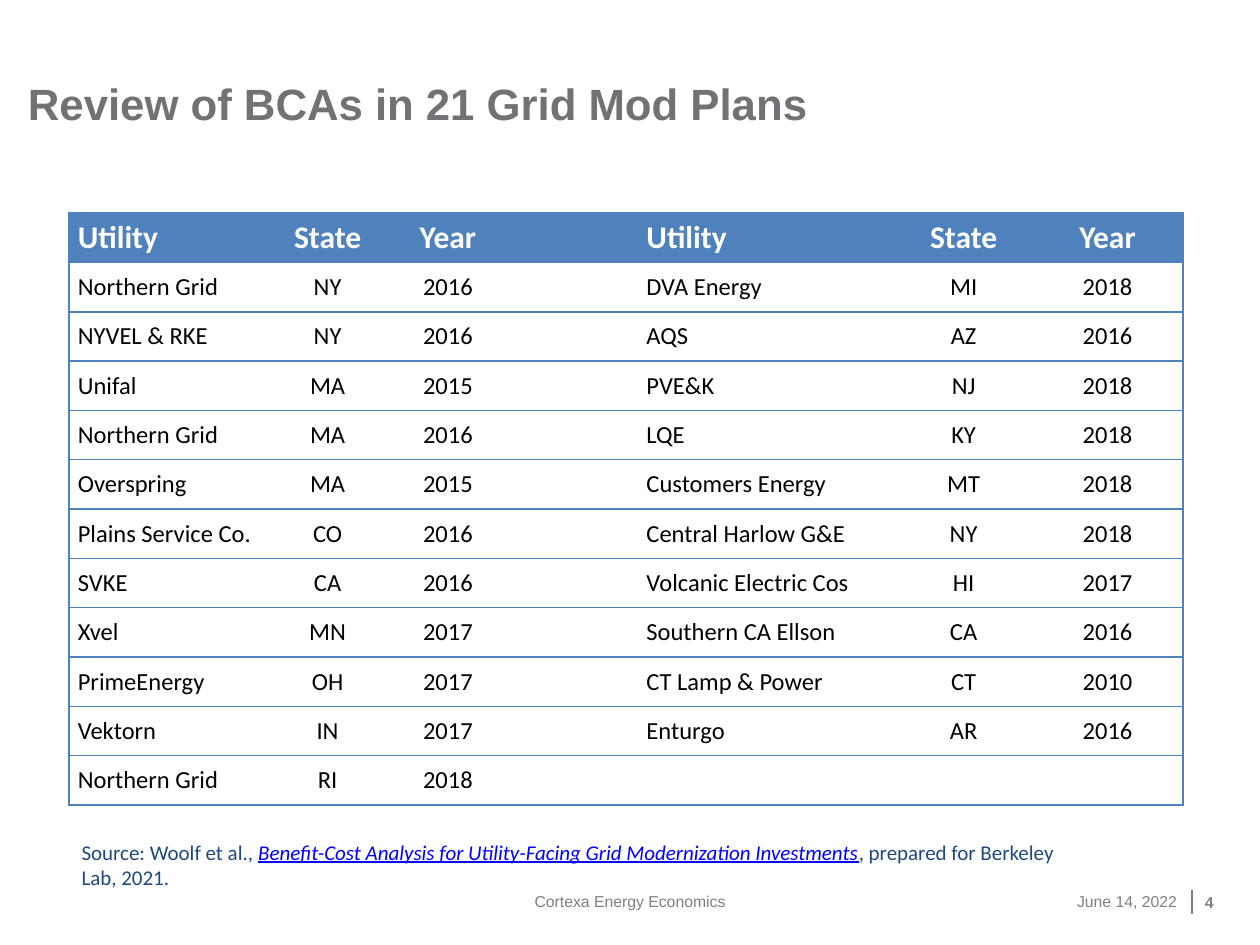
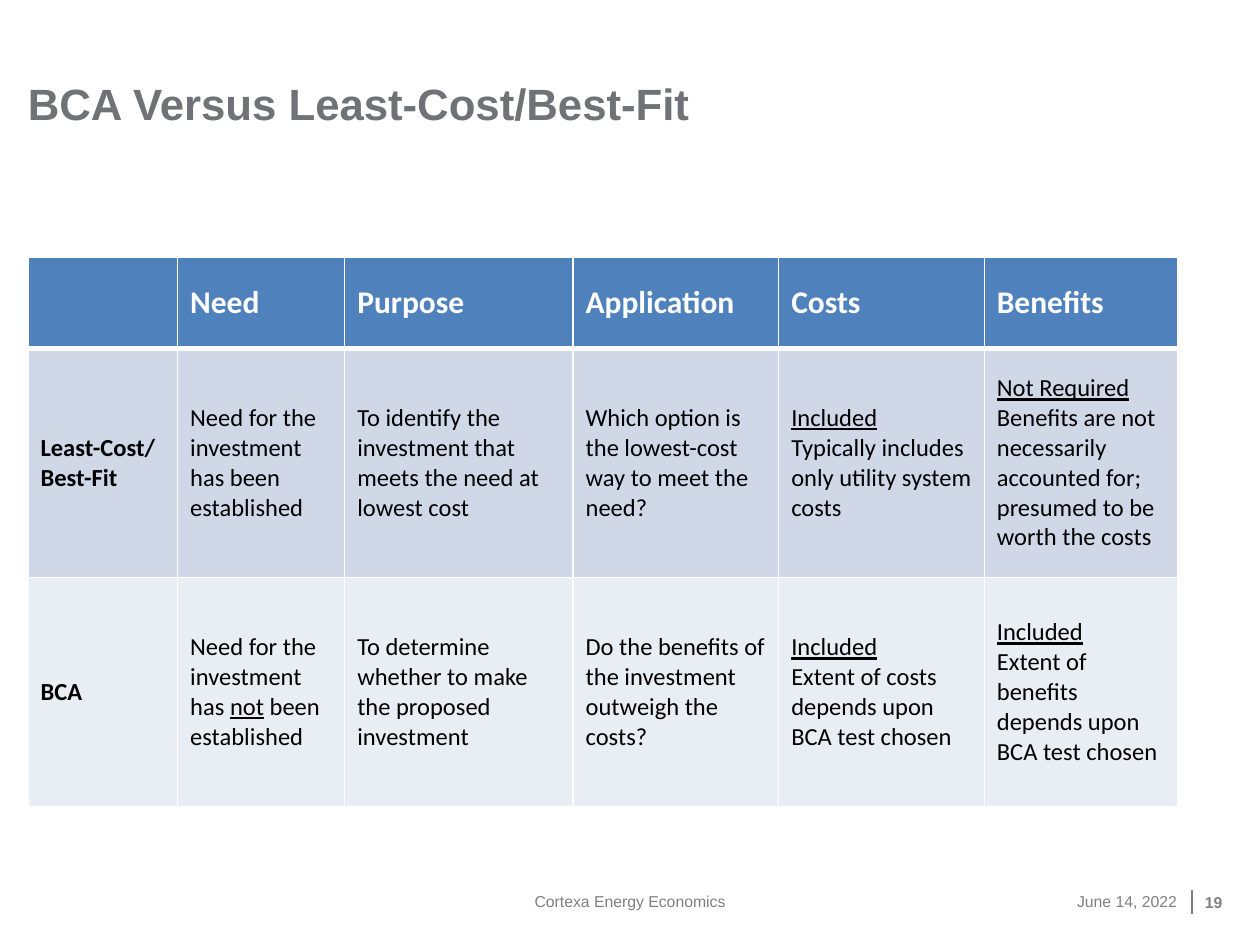
from lxml.etree import SubElement
from pptx import Presentation
from pptx.dml.color import RGBColor
from pptx.enum.shapes import MSO_CONNECTOR
from pptx.enum.text import MSO_ANCHOR, PP_ALIGN
from pptx.oxml.ns import qn
from pptx.util import Pt

BLUE, WHITE, BLACK, GREY = "4F81BD", "FFFFFF", "000000", "808080"
BANDS = ["D0D8E8", "E9EDF4"]
LEFT, MID, RIGHT = PP_ALIGN.LEFT, PP_ALIGN.CENTER, PP_ALIGN.RIGHT

TITLE = {"name": "Arial", "size": Pt(25), "bold": True, "ink": "707276"}
SMALL = {"name": "Arial", "size": Pt(9), "bold": False, "ink": GREY}
HEAD = {"name": "Calibri", "size": Pt(18), "bold": True, "ink": WHITE}
BODY = {"name": "Calibri", "size": Pt(14), "bold": False, "ink": BLACK}
NOTE = {"name": "Calibri", "size": Pt(12), "ink": "1F497D"}
UNDER = {"underline": True}
CITED = {"underline": True, "italic": True, "ink": "0000FF"}

PLANS = [
    "Utility|State|Year||Utility|State|Year",
    "Northern Grid|NY|2016||DVA Energy|MI|2018",
    "NYVEL & RKE|NY|2016||AQS|AZ|2016",
    "Unifal|MA|2015||PVE&K|NJ|2018",
    "Northern Grid|MA|2016||LQE|KY|2018",
    "Overspring|MA|2015||Customers Energy|MT|2018",
    "Plains Service Co.|CO|2016||Central Harlow G&E|NY|2018",
    "SVKE|CA|2016||Volcanic Electric Cos|HI|2017",
    "Xvel|MN|2017||Southern CA Ellson|CA|2016",
    "PrimeEnergy|OH|2017||CT Lamp & Power|CT|2010",
    "Vektorn|IN|2017||Enturgo|AR|2016",
    "Northern Grid|RI|2018||||",
]
TESTS = [
    ["", "Need", "Purpose", "Application", "Costs", "Benefits"],
    ["Least-Cost/\nBest-Fit",
     "Need for the investment has been established",
     "To identify the investment that meets the need at lowest cost",
     "Which option is the lowest-cost way to meet the need?",
     "_Included_\nTypically includes only utility system costs",
     "_Not Required_\nBenefits are not necessarily accounted for; "
     "presumed to be worth the costs"],
    ["BCA",
     "Need for the investment has _not_ been established",
     "To determine whether to make the proposed investment",
     "Do the benefits of the investment outweigh the costs?",
     "_Included_\nExtent of costs depends upon BCA test chosen",
     "_Included_\nExtent of benefits depends upon BCA test chosen"],
]
SOURCE = ("Source: Woolf et al., _Benefit-Cost Analysis for Utility-Facing Grid "
          "Modernization Investments_, prepared for Berkeley Lab, 2021.")


def hue(code):
    """Turn a hex string into a colour."""
    return RGBColor.from_string(code)


def style(font, look):
    """Apply a dict of format values to a font."""
    for key, value in look.items():
        if key == "ink":
            font.color.rgb = hue(value)
        else:
            setattr(font, key, value)


def write(frame, text, look, mark=UNDER, align=LEFT, gap=0):
    """Fill a frame with lines of text; parts between underscores take the mark."""
    for row, line in enumerate(text.split("\n")):
        para = frame.add_paragraph() if row else frame.paragraphs[0]
        para.alignment = align
        if gap:
            para.space_before = para.space_after = Pt(gap)
        for turn, part in enumerate(line.split("_")):
            if part:
                run = para.add_run()
                run.text = part
                style(run.font, {**look, **mark} if turn % 2 else look)


def label(slide, box, text, look, anchor=MSO_ANCHOR.MIDDLE, align=LEFT,
          pads=(0, 0, 0, 0), mark=UNDER):
    """Add a wrapped text box."""
    frame = slide.shapes.add_textbox(*map(Pt, box)).text_frame
    frame.word_wrap = True
    frame.vertical_anchor = anchor
    for side, pad in zip(("left", "top", "right", "bottom"), pads):
        setattr(frame, "margin_" + side, Pt(pad))
    write(frame, text, look, mark, align)


def edge(cell, side, ink, width=1):
    """Draw one cell border, or clear it when there is no ink."""
    props = cell._tc.get_or_add_tcPr()
    line = SubElement(props, qn("a:ln" + side), w=str(Pt(width)))
    if ink:
        fill = SubElement(line, qn("a:solidFill"))
        SubElement(fill, qn("a:srgbClr"), val=ink)
    else:
        SubElement(line, qn("a:noFill"))


def grid(slide, left, top, cols, rows):
    """Add a table with given column widths and row heights."""
    size = map(Pt, (left, top, sum(cols), sum(rows)))
    table = slide.shapes.add_table(len(rows), len(cols), *size).table
    table.horz_banding = False
    for col, width in zip(table.columns, cols):
        col.width = Pt(width)
    for row, height in zip(table.rows, rows):
        row.height = Pt(height)
    return table


def paint(cell, text, look, fill, pads, align=LEFT, gap=0):
    """Fill a cell with colour and text."""
    cell.fill.solid()
    cell.fill.fore_color.rgb = hue(fill)
    cell.vertical_anchor = MSO_ANCHOR.MIDDLE
    cell.margin_left = cell.margin_right = Pt(pads[0])
    cell.margin_top = cell.margin_bottom = Pt(pads[1])
    write(cell.text_frame, text, look, align=align, gap=gap)


def frame_page(deck, title, page, left, width):
    """Add a slide with its title and footer."""
    slide = deck.slides.add_slide(deck.slide_layouts[6])
    label(slide, (578, 500.5, 94.5, 29), "June 14, 2022", SMALL, align=RIGHT)
    rule = slide.shapes.add_connector(
        MSO_CONNECTOR.STRAIGHT, Pt(681), Pt(508.5), Pt(681), Pt(522.5))
    rule.line.color.rgb = hue(GREY)
    rule.line.width = Pt(1)
    SubElement(rule._element.spPr, qn("a:effectLst"))
    label(slide, (688.5, 501, 18, 29), page, {**SMALL, "bold": True},
          pads=(0, 0, 7.2, 0))
    label(slide, (16, 21.5, 595.5, 52.5), title, TITLE, MSO_ANCHOR.BOTTOM)
    label(slide, (left, 500.5, width, 29), "Cortexa Energy Economics",
          {**SMALL, "ink": "7F7F7F"}, align=MID, pads=(7.2, 3.6, 7.2, 3.6))
    return slide


def plan_table(slide):
    """Add the list of reviewed plans."""
    cols = [114, 67.5, 70, 73.5, 147, 78.5, 86]
    table = grid(slide, 39.5, 121.8, cols, [28.2] * len(PLANS))
    for row, line in enumerate(PLANS):
        look, fill = (BODY, WHITE) if row else (HEAD, BLUE)
        for col, text in enumerate(line.split("|")):
            cell = table.cell(row, col)
            edge(cell, "L", BLUE if col == 0 else None)
            edge(cell, "R", BLUE if col == len(cols) - 1 else None)
            edge(cell, "T", BLUE)
            edge(cell, "B", BLUE)
            align = LEFT if col in (0, 4) else MID
            paint(cell, text, look, fill, (5, 0), align, 1)


def test_table(slide):
    """Add the comparison of the two tests."""
    cols = [85.5, 95.5, 130.5, 117.5, 117.5, 110.5]
    table = grid(slide, 16, 147, cols, [52, 131, 131])
    for row, line in enumerate(TESTS):
        fill = BANDS[row - 1] if row else BLUE
        for col, text in enumerate(line):
            cell = table.cell(row, col)
            edge(cell, "L", WHITE)
            edge(cell, "R", WHITE)
            edge(cell, "T", WHITE, 3 if row == 1 else 1)
            edge(cell, "B", WHITE, 3 if row == 0 else 1)
            look = {**BODY, "bold": col == 0} if row else HEAD
            paint(cell, text, look, fill, (7.2, 3.6))


def main():
    """Build both slides and save them."""
    deck = Presentation()
    deck.slide_width, deck.slide_height = Pt(720), Pt(540)
    slide = frame_page(deck, "Review of BCAs in 21 Grid Mod Plans", "4", 0, 720)
    plan_table(slide)
    label(slide, (39.5, 476, 583, 36), SOURCE, NOTE, MSO_ANCHOR.TOP,
          pads=(7.2, 3.6, 7.2, 3.6), mark=CITED)
    slide = frame_page(deck, "BCA Versus Least-Cost/Best-Fit", "19", 246, 228)
    test_table(slide)
    deck.save("out.pptx")


if __name__ == "__main__":
    main()
